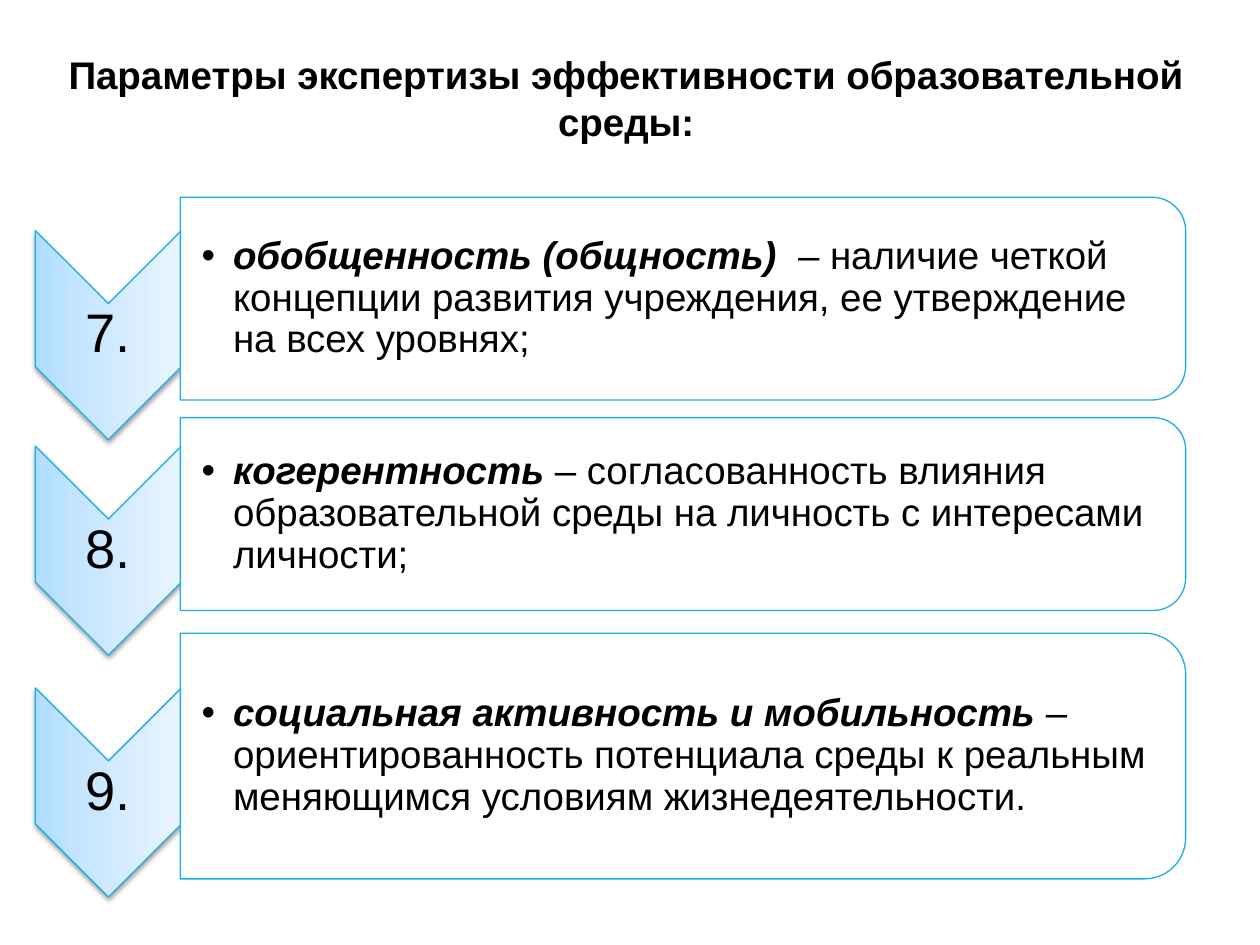
from dataclasses import dataclass

from lxml import etree
from pptx import Presentation
from pptx.dml.color import RGBColor
from pptx.enum.shapes import MSO_SHAPE
from pptx.enum.text import MSO_ANCHOR, PP_ALIGN
from pptx.oxml import parse_xml
from pptx.oxml.ns import qn
from pptx.util import Inches, Pt

CHEVRON = MSO_SHAPE.CHEVRON
ROUND_SIDE = MSO_SHAPE.ROUND_2_SAME_RECTANGLE
MIDDLE, TOP = MSO_ANCHOR.MIDDLE, MSO_ANCHOR.TOP
CENTER, LEFT = PP_ALIGN.CENTER, PP_ALIGN.LEFT

NAMESPACE = 'xmlns:a="http://schemas.openxmlformats.org/drawingml/2006/main"'
WIDTH, HEIGHT = Inches(10), Inches(7.5)
COLUMN, ROW = WIDTH / 100, HEIGHT / 75
FONT, BLACK, WHITE, ACCENT = "Arial", "000000", "FFFFFF", "1CADE4"
GRADIENT = [(0, "B0DDFF"), (35, "C7E6FF"), (100, "EAF5FF")]
CHEVRON_CENTER, CHEVRON_LENGTH, CHEVRON_BREADTH, CHEVRON_DROP = 8.6, 16.6, 11.6, 2.9
CARD_LEFT, CARD_WIDTH = 14.3, 79.8


@dataclass
class Area:
    left: float
    top: float
    width: float
    height: float

    def emu(self) -> tuple[int, int, int, int]:
        return (round(self.left * COLUMN), round(self.top * ROW),
                round(self.width * COLUMN), round(self.height * ROW))


@dataclass
class Parameter:
    number: str
    term: str
    meaning: str
    middle: float
    height: float
    text_width: float = 79


PARAMETERS = [
    Parameter("7.", "обобщенность (общность)  ",
              "– наличие четкой концепции развития учреждения, ее утверждение на всех уровнях;",
              23.7, 16.1),
    Parameter("8.", "когерентность",
              " – согласованность влияния образовательной среды на личность с интересами личности;",
              40.8, 15.3),
    Parameter("9.", "социальная активность и мобильность ",
              "– ориентированность потенциала среды к реальным меняющимся условиям жизнедеятельности.",
              60, 19.5, 78.8),
]


def color(value: str) -> RGBColor:
    return RGBColor.from_string(value)


def centered(x: float, y: float, width: float, height: float) -> Area:
    return Area(x - width / 2, y - height / 2, width, height)


def add_turned_shape(page, kind, area: Area):
    shape = page.shapes.add_shape(kind, *area.emu())
    shape.rotation = 90
    shape.shadow.inherit = False
    shape.fill.solid()
    shape.fill.fore_color.rgb = color(WHITE)
    shape.line.color.rgb = color(ACCENT)
    shape.line.width = Pt(0.75)
    return shape


def add_chevron(page, middle: float) -> None:
    shape = add_turned_shape(page, CHEVRON, centered(
        CHEVRON_CENTER, middle, CHEVRON_LENGTH, CHEVRON_BREADTH))
    properties = shape.element.spPr
    stops = "".join(f'<a:gs pos="{position * 1000}"><a:srgbClr val="{value}"/></a:gs>'
                    for position, value in GRADIENT)
    gradient = parse_xml(
        f'<a:gradFill {NAMESPACE} rotWithShape="1"><a:gsLst>{stops}</a:gsLst>'
        '<a:lin ang="16200000" scaled="0"/></a:gradFill>')
    properties.replace(properties.find(qn("a:solidFill")), gradient)
    shadow = parse_xml(
        f'<a:outerShdw {NAMESPACE} blurRad="{Pt(3.1)}" dist="{Pt(1.6)}" dir="5400000" '
        f'rotWithShape="0"><a:srgbClr val="{BLACK}"><a:alpha val="38000"/>'
        '</a:srgbClr></a:outerShdw>')
    properties.find(qn("a:effectLst")).append(shadow)


def add_card(page, middle: float, height: float) -> None:
    shape = add_turned_shape(page, ROUND_SIDE, centered(
        CARD_LEFT + CARD_WIDTH / 2, middle, height, CARD_WIDTH))
    fill_color = shape.element.spPr.find(qn("a:solidFill"))[0]
    etree.SubElement(fill_color, qn("a:alpha"), val="90000")


def add_text_box(page, area: Area, anchor, align, left_inset: float, inset: float):
    box = page.shapes.add_textbox(*area.emu())
    frame = box.text_frame
    frame.word_wrap = True
    frame.vertical_anchor = anchor
    frame.margin_left, frame.margin_right = Inches(left_inset), Inches(inset)
    frame.margin_top = frame.margin_bottom = Inches(min(inset, 0.05))
    para = frame.paragraphs[0]
    para.alignment = align
    return para


def add_span(para, text: str, size: float, bold: bool = False, italic: bool = False) -> None:
    span = para.add_run()
    span.text = text
    span.font.name = FONT
    span.font.size = Pt(size)
    span.font.bold = bold
    span.font.italic = italic
    span.font.color.rgb = color(BLACK)


def add_bullet(para) -> None:
    properties = para._p.get_or_add_pPr()
    properties.set("marL", str(Inches(0.25)))
    properties.set("indent", str(Inches(-0.25)))
    etree.SubElement(properties, qn("a:buFont"), typeface=FONT)
    etree.SubElement(properties, qn("a:buChar"), char="•")


def add_parameter(page, item: Parameter) -> None:
    chevron_middle = item.middle + CHEVRON_DROP
    add_chevron(page, chevron_middle)
    label = add_text_box(page, centered(CHEVRON_CENTER, chevron_middle, CHEVRON_BREADTH, 5),
                         MIDDLE, CENTER, 0.02, 0.02)
    label.line_spacing = 0.9
    add_span(label, item.number, 31)

    add_card(page, item.middle, item.height)
    text_height = item.height - 1.6
    area = Area(CARD_LEFT, item.middle - text_height / 2, item.text_width, text_height)
    para = add_text_box(page, area, MIDDLE, LEFT, 0.17, 0.02)
    para.line_spacing = 0.9
    add_bullet(para)
    add_span(para, item.term, 22, bold=True, italic=True)
    add_span(para, item.meaning, 22)


def main() -> None:
    deck = Presentation()
    deck.slide_width, deck.slide_height = WIDTH, HEIGHT
    page = deck.slides.add_slide(deck.slide_layouts[6])
    page.background.fill.solid()
    page.background.fill.fore_color.rgb = color(WHITE)

    title = add_text_box(page, Area(2.8, 3.6, 93.8, 9.4), TOP, CENTER, 0.1, 0.1)
    title.space_before = Pt(4.4)
    add_span(title, "Параметры экспертизы эффективности образовательной среды:", 22, bold=True)

    for item in PARAMETERS:
        add_parameter(page, item)
    deck.save("out.pptx")


if __name__ == "__main__":
    main()
